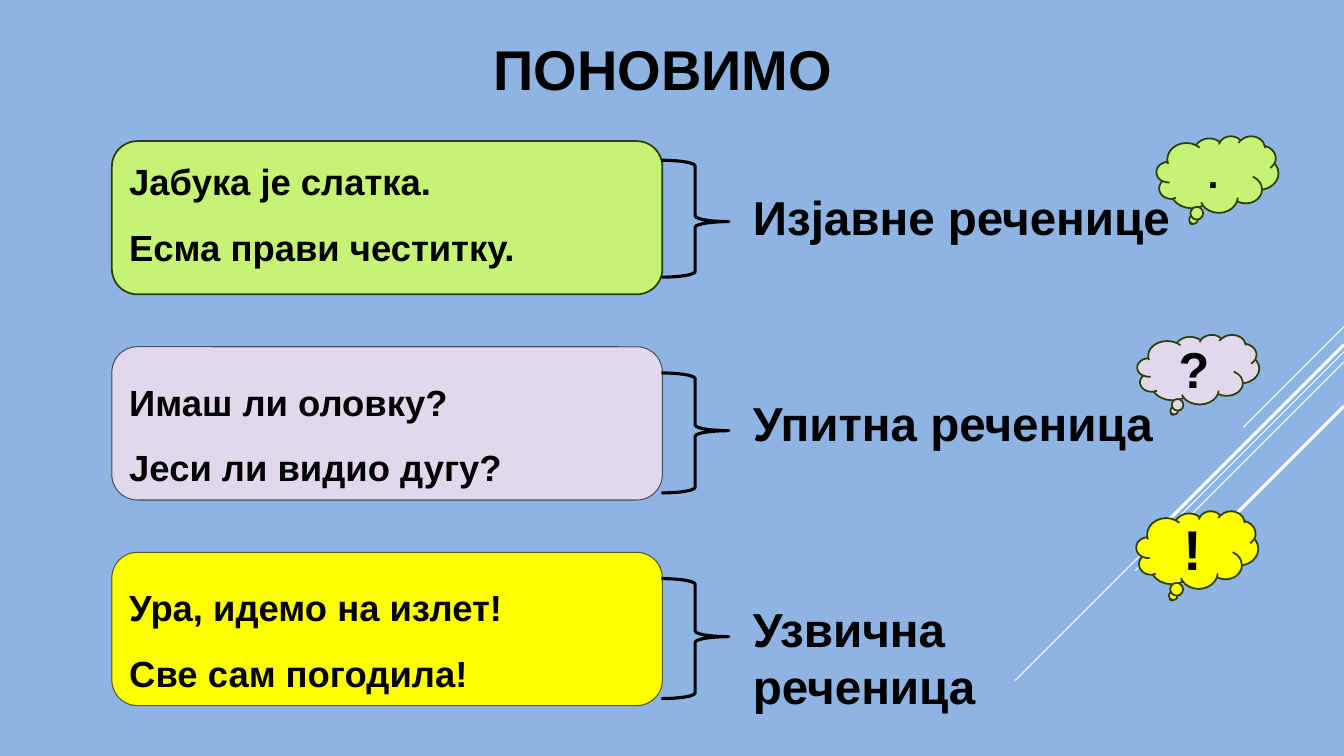
from dataclasses import dataclass

from lxml.etree import SubElement
from pptx import Presentation
from pptx.dml.color import RGBColor
from pptx.enum.shapes import MSO_CONNECTOR, MSO_SHAPE
from pptx.enum.text import MSO_ANCHOR, MSO_AUTO_SIZE, PP_ALIGN
from pptx.oxml.ns import qn
from pptx.util import Inches, Pt


@dataclass(frozen=True)
class Theme:
    font: str = "Arial"
    background: str = "8EB4E3"
    ink: str = "000000"
    outline: str = "2E3E07"
    streak: str = "FFFFFF"
    title_size: int = 40
    example_size: int = 26
    label_size: int = 34
    outline_width: float = 1.25
    faint_width: float = 0.75
    brace_width: float = 2.25


THEME = Theme()
WIDTH, HEIGHT = 13.33, 7.5
TITLE = "ПОНОВИМО"

# Brace: offset below the card, height, share of height where the point sits.
# Cloud: left, top, height.
SENTENCE_KINDS = [
    dict(examples=["Јабука је слатка.", "Есма прави честитку."],
         label="Изјавнe реченицe", mark=".", mark_size=28, color="C5F375",
         faint=False, bottom_inset=0.34, brace=(0.19, 1.16, 0.525),
         cloud=(11.47, 1.35, 0.76)),
    dict(examples=["Имаш ли оловку?", "Јеси ли видио дугу?"],
         label="Упитна реченица", mark="?", mark_size=36, color="E1D9EB",
         faint=True, bottom_inset=0.05, brace=(0.26, 1.19, 0.481),
         cloud=(11.28, 3.32, 0.69)),
    dict(examples=["Ура, идемо на излет!", "Све сам погодила!"],
         label="Узвична реченица", mark="!", mark_size=40, color="FFFF00",
         faint=True, bottom_inset=0.05, brace=(0.26, 1.19, 0.484),
         cloud=(11.27, 5.07, 0.77)),
]

# Diagonal streaks from the right edge: start height, run, line width.
STREAKS = [(3.24, 1.0, 0.75), (3.49, 3.26, 0.75), (3.59, 2.07, 0.75),
           (3.42, 1.91, 2.25), (4.03, 1.39, 2.25)]

FIRST_ROW, ROW_PITCH = 1.4, 2.04
CARD_LEFT, CARD_WIDTH, CARD_HEIGHT = 1.11, 5.46, 1.52
BRACE_LEFT, BRACE_WIDTH = 6.56, 0.67
LABEL_LEFT, LABEL_DROP, LABEL_WIDTH, LABEL_HEIGHT = 7.37, 0.42, 4.4, 0.67
CLOUD_WIDTH = 1.21


def color(value):
    return RGBColor.from_string(value)


def write(box, lines, size, align=PP_ALIGN.LEFT, spacing=1.0):
    for index, line in enumerate(lines):
        frame = box.text_frame
        para = frame.add_paragraph() if index else frame.paragraphs[0]
        para.alignment = align
        para.line_spacing = spacing
        span = para.add_run()
        span.text = line
        span.font.name = THEME.font
        span.font.size = Pt(size)
        span.font.bold = True
        span.font.color.rgb = color(THEME.ink)


def add_text(page, area, text, size, align=PP_ALIGN.LEFT):
    box = page.shapes.add_textbox(*map(Inches, area))
    write(box, [text], size, align)
    return box.text_frame


def add_outlined(page, kind, area, fill, line, width):
    """Add a preset shape; a fill of None leaves it open."""
    shape = page.shapes.add_shape(kind, *map(Inches, area))
    shape.shadow.inherit = False
    if fill:
        shape.fill.solid()
        shape.fill.fore_color.rgb = color(fill)
    else:
        shape.fill.background()
    shape.line.color.rgb = color(line)
    shape.line.width = Pt(width)
    shape.text_frame.word_wrap = True
    shape.text_frame.vertical_anchor = MSO_ANCHOR.MIDDLE
    return shape


def add_streak(page, top, run, width):
    streak = page.shapes.add_connector(
        MSO_CONNECTOR.STRAIGHT, Inches(WIDTH), Inches(top),
        Inches(WIDTH - run), Inches(top + run))
    streak.line.color.rgb = color(THEME.streak)
    streak.line.width = Pt(width)
    SubElement(streak._element.spPr, qn("a:effectLst"))


def add_brace(page, row_top, drop, height, point):
    brace = add_outlined(page, MSO_SHAPE.RIGHT_BRACE,
                         (BRACE_LEFT, row_top + drop, BRACE_WIDTH, height),
                         None, THEME.ink, THEME.brace_width)
    brace.adjustments[1] = point


def add_card(page, row_top, kind):
    line, width = ((THEME.ink, THEME.faint_width) if kind["faint"]
                   else (THEME.outline, THEME.outline_width))
    card = add_outlined(page, MSO_SHAPE.ROUNDED_RECTANGLE,
                        (CARD_LEFT, row_top, CARD_WIDTH, CARD_HEIGHT),
                        kind["color"], line, width)
    if kind["faint"]:
        line_color = card.line._ln.find(".//" + qn("a:srgbClr"))
        SubElement(line_color, qn("a:alpha"), val="60000")
    card.text_frame.margin_bottom = Inches(kind["bottom_inset"])
    write(card, kind["examples"], THEME.example_size, spacing=1.5)


def add_cloud(page, kind):
    left, top, height = kind["cloud"]
    cloud = add_outlined(page, MSO_SHAPE.CLOUD_CALLOUT,
                         (left, top, CLOUD_WIDTH, height),
                         kind["color"], THEME.outline, THEME.outline_width)
    write(cloud, [kind["mark"]], kind["mark_size"], PP_ALIGN.CENTER)


def main():
    deck = Presentation()
    deck.slide_width, deck.slide_height = Inches(WIDTH), Inches(HEIGHT)
    page = deck.slides.add_slide(deck.slide_layouts[6])
    page.background.fill.solid()
    page.background.fill.fore_color.rgb = color(THEME.background)

    for streak in STREAKS:
        add_streak(page, *streak)

    for row, kind in enumerate(SENTENCE_KINDS):
        row_top = FIRST_ROW + row * ROW_PITCH
        add_card(page, row_top, kind)
        add_brace(page, row_top, *kind["brace"])
        add_cloud(page, kind)
        label = add_text(page, (LABEL_LEFT, row_top + LABEL_DROP,
                                LABEL_WIDTH, LABEL_HEIGHT),
                         kind["label"], THEME.label_size)
        label.word_wrap = False
        label.auto_size = MSO_AUTO_SIZE.SHAPE_TO_FIT_TEXT

    title = add_text(page, (4.11, 0.36, 4.93, 0.64), TITLE,
                     THEME.title_size, PP_ALIGN.CENTER)
    title.word_wrap = True
    title.vertical_anchor = MSO_ANCHOR.MIDDLE
    deck.save("out.pptx")


if __name__ == "__main__":
    main()
